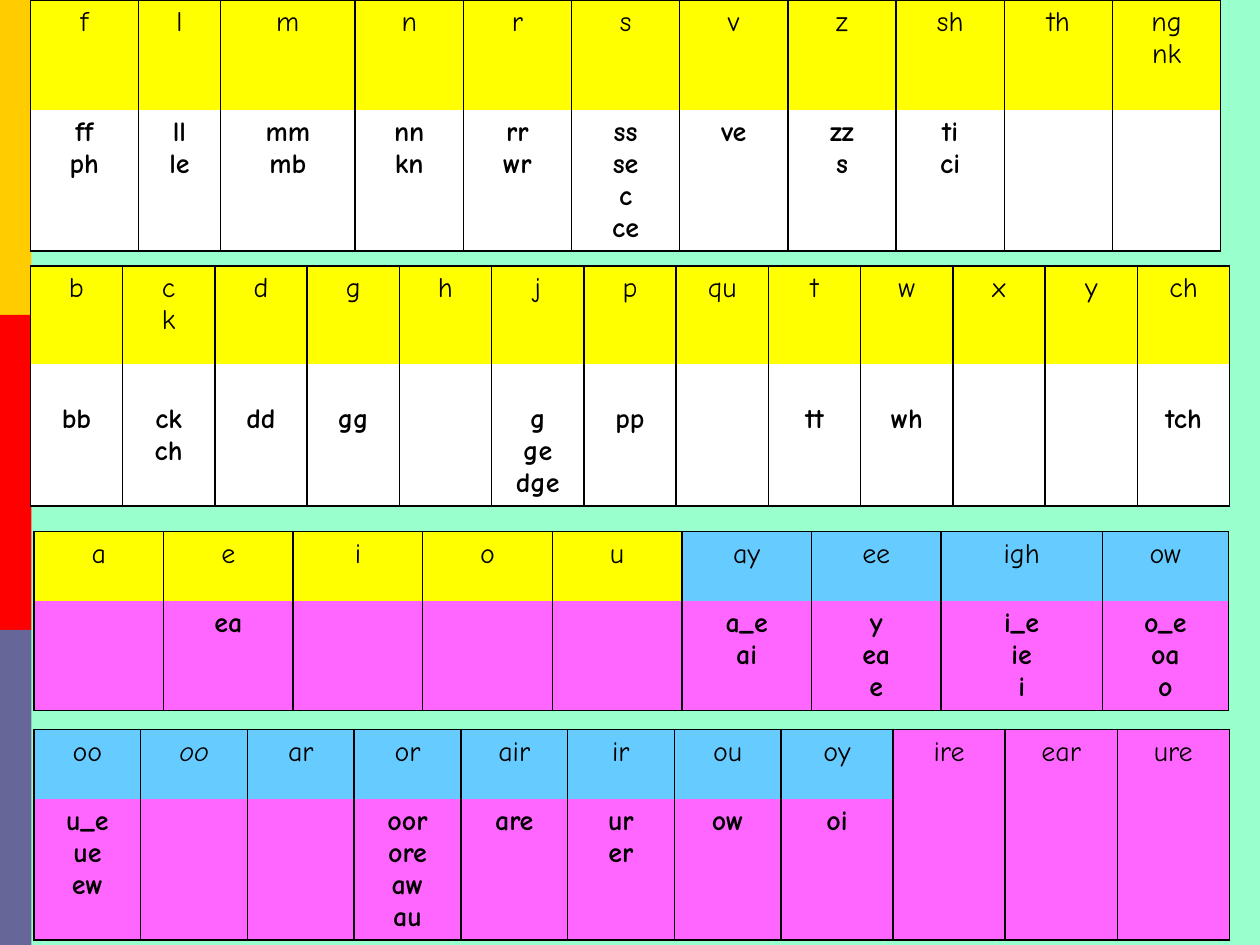
"""Builds a one-slide chart of letter sounds and their spellings."""
from dataclasses import dataclass

from lxml.etree import SubElement
from pptx import Presentation
from pptx.dml.color import RGBColor
from pptx.enum.shapes import MSO_SHAPE
from pptx.enum.text import PP_ALIGN
from pptx.oxml.ns import qn
from pptx.util import Inches, Pt


@dataclass(frozen=True)
class Theme:
    font: str = "Comic Neue"
    size: int = 16
    rule: int = 1
    pad: float = 0.05
    ink: str = "000000"
    paper: str = "FFFFFF"
    mint: str = "99FFCC"
    amber: str = "FFCC00"
    red: str = "FF0000"
    slate: str = "666699"
    yellow: str = "FFFF00"
    blue: str = "66CCFF"
    pink: str = "FF66FF"


class Board:
    def __init__(self, slide, theme):
        self.slide = slide
        self.theme = theme
        self.paint(slide.background.fill, theme.mint)

    def paint(self, fill, color):
        fill.solid()
        fill.fore_color.rgb = RGBColor.from_string(color)

    def band(self, top, color):
        shape = self.slide.shapes.add_shape(
            MSO_SHAPE.RECTANGLE, 0, Inches(top), Inches(0.25), Inches(2.5))
        shape.shadow.inherit = False
        self.paint(shape.fill, color)
        shape.line.fill.background()

    def edge(self, cell, sides):
        props = cell._tc.get_or_add_tcPr()
        for side in "LRTB":
            line = SubElement(props, qn(f"a:ln{side}"), w=str(Pt(self.theme.rule)))
            if side in sides:
                fill = SubElement(line, qn("a:solidFill"))
                SubElement(fill, qn("a:srgbClr"), val=self.theme.ink)
            else:
                SubElement(line, qn("a:noFill"))

    def cell(self, cell, text, color, sides, bold, drop=0):
        self.edge(cell, sides)
        self.paint(cell.fill, color)
        cell.margin_top = Inches(self.theme.pad + drop)
        cell.text_frame.text = "" if text == "-" else text.replace("/", "\n")
        for para in cell.text_frame.paragraphs:
            para.alignment = PP_ALIGN.CENTER
            font = para.font
            if para.runs:
                font = para.runs[0].font
            font.name = self.theme.font
            font.size = Pt(self.theme.size)
            font.bold = bold
            font.color.rgb = RGBColor.from_string(self.theme.ink)

    def table(self, place, rows, heads, bodies, tints, base, fixed, drop=0):
        left, top, width = place
        heads, bodies = heads.split(), bodies.split()
        grid = self.slide.shapes.add_table(
            2, len(heads), Inches(left), Inches(top),
            Inches(width), Inches(sum(rows))).table
        grid.first_row = grid.horz_banding = False
        for row, height in zip(grid.rows, rows):
            row.height = Inches(height)
        share = (width - sum(fixed.values())) / (len(heads) - len(fixed))
        for col, (head, body, tint) in enumerate(zip(heads, bodies, tints)):
            grid.columns[col].width = Inches(fixed.get(head, share))
            self.cell(grid.cell(0, col), head, tint, "LRT", False)
            self.cell(grid.cell(1, col), body, base, "LRB", True, drop)
        return grid


def main():
    deck = Presentation()
    deck.slide_width, deck.slide_height = Inches(10), Inches(7.5)
    theme = Theme()
    board = Board(deck.slides.add_slide(deck.slide_layouts[6]), theme)
    for step, color in enumerate((theme.amber, theme.red, theme.slate)):
        board.band(2.5 * step, color)

    board.table((0.24, 0, 9.45), (0.87, 1.12),
                "f l m n r s v z sh th ng/nk",
                "ff/ph ll/le mm/mb nn/kn rr/wr ss/se/c/ce ve zz/s ti/ci - -",
                [theme.yellow] * 11, theme.paper, {"l": 0.65, "m": 1.07})
    board.table((0.24, 2.11, 9.52), (0.78, 1.12),
                "b c/k d g h j p qu t w x y ch",
                "bb ck/ch dd gg - g/ge/dge pp - tt wh - - tch",
                [theme.yellow] * 13, theme.paper, {}, drop=0.26)
    board.table((0.27, 4.22, 9.48), (0.55, 0.87),
                "a e i o u ay ee igh ow",
                "- ea - - - a_e/ai y/ea/e i_e/ie/i o_e/oa/o",
                [theme.yellow] * 5 + [theme.blue] * 4, theme.pink,
                {"igh": 1.28, "ow": 1})
    vowels = board.table((0.27, 5.79, 9.49), (0.55, 1.12),
                         "oo oo ar or air ir ou oy ire ear ure",
                         "u_e/ue/ew - - oor/ore/aw/au are ur/er ow oi - - -",
                         [theme.blue] * 8 + [theme.pink] * 3, theme.pink,
                         dict.fromkeys(("oy", "ire", "ear", "ure"), 0.89))
    short = vowels.cell(0, 1).text_frame.paragraphs[0]
    short.runs[0].font.italic = True
    deck.save("out.pptx")


if __name__ == "__main__":
    main()
